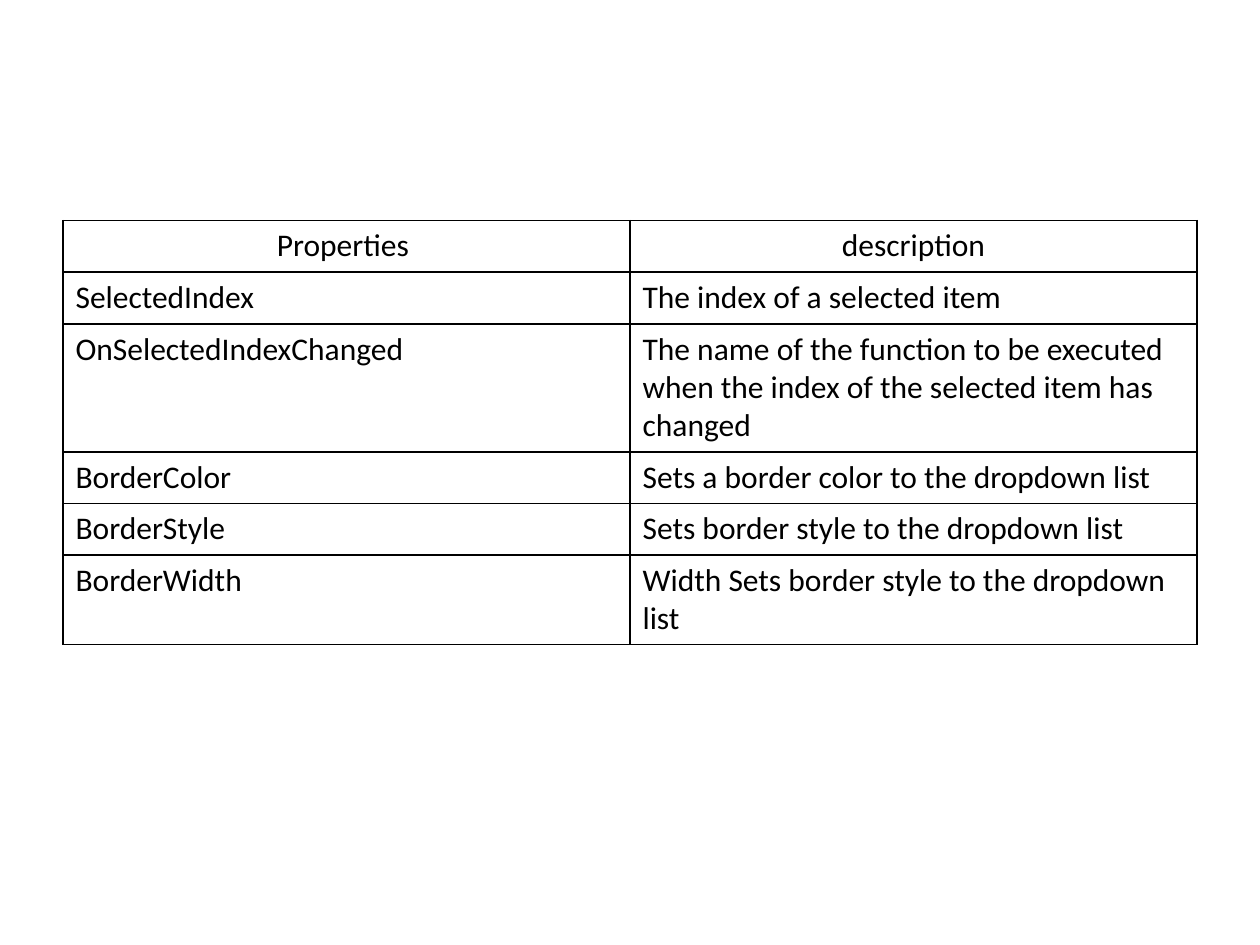
from lxml.etree import SubElement
from pptx import Presentation
from pptx.dml.color import RGBColor
from pptx.enum.text import PP_ALIGN
from pptx.oxml.ns import qn
from pptx.util import Inches, Pt

ROWS = [
    ("Properties ", "description"),
    ("SelectedIndex", "The index of a selected item"),
    ("OnSelectedIndexChanged",
     "The name of the function to be executed when the index of the selected item has changed"),
    ("BorderColor", "Sets a border color to the dropdown list"),
    ("BorderStyle", "Sets border style to the dropdown list"),
    ("BorderWidth", "Width Sets border style to the dropdown list"),
]
BLACK = "000000"
COLUMN_WIDTH = 4.5
ROW_HEIGHT = 0.41


def set_borders(cell, color, width):
    """Draw all four sides of a cell; the lines must precede its fill."""
    properties = cell._tc.get_or_add_tcPr()
    for index, side in enumerate(("a:lnL", "a:lnR", "a:lnT", "a:lnB")):
        line = SubElement(properties, qn(side), w=str(Pt(width)))
        fill = SubElement(line, qn("a:solidFill"))
        SubElement(fill, qn("a:srgbClr"), val=color)
        properties.insert(index, line)


def format_text(para, color, alignment):
    para.alignment = alignment
    for span in para.runs:
        span.font.name = "Calibri"
        span.font.size = Pt(18)
        span.font.bold = False
        span.font.color.rgb = RGBColor.from_string(color)


deck = Presentation()
deck.slide_width, deck.slide_height = Inches(10), Inches(7.5)
page = deck.slides.add_slide(deck.slide_layouts[6])

table = page.shapes.add_table(
    len(ROWS), 2, Inches(0.5), Inches(1.75),
    Inches(2 * COLUMN_WIDTH), Inches(len(ROWS) * ROW_HEIGHT)).table
table.first_row = table.horz_banding = False
for column in table.columns:
    column.width = Inches(COLUMN_WIDTH)

for row_index, texts in enumerate(ROWS):
    table.rows[row_index].height = Inches(ROW_HEIGHT)
    alignment = PP_ALIGN.CENTER if row_index == 0 else PP_ALIGN.LEFT
    for column_index, text in enumerate(texts):
        cell = table.cell(row_index, column_index)
        cell.text_frame.text = text
        cell.fill.background()
        set_borders(cell, BLACK, 1)
        format_text(cell.text_frame.paragraphs[0], BLACK, alignment)

deck.save("out.pptx")
